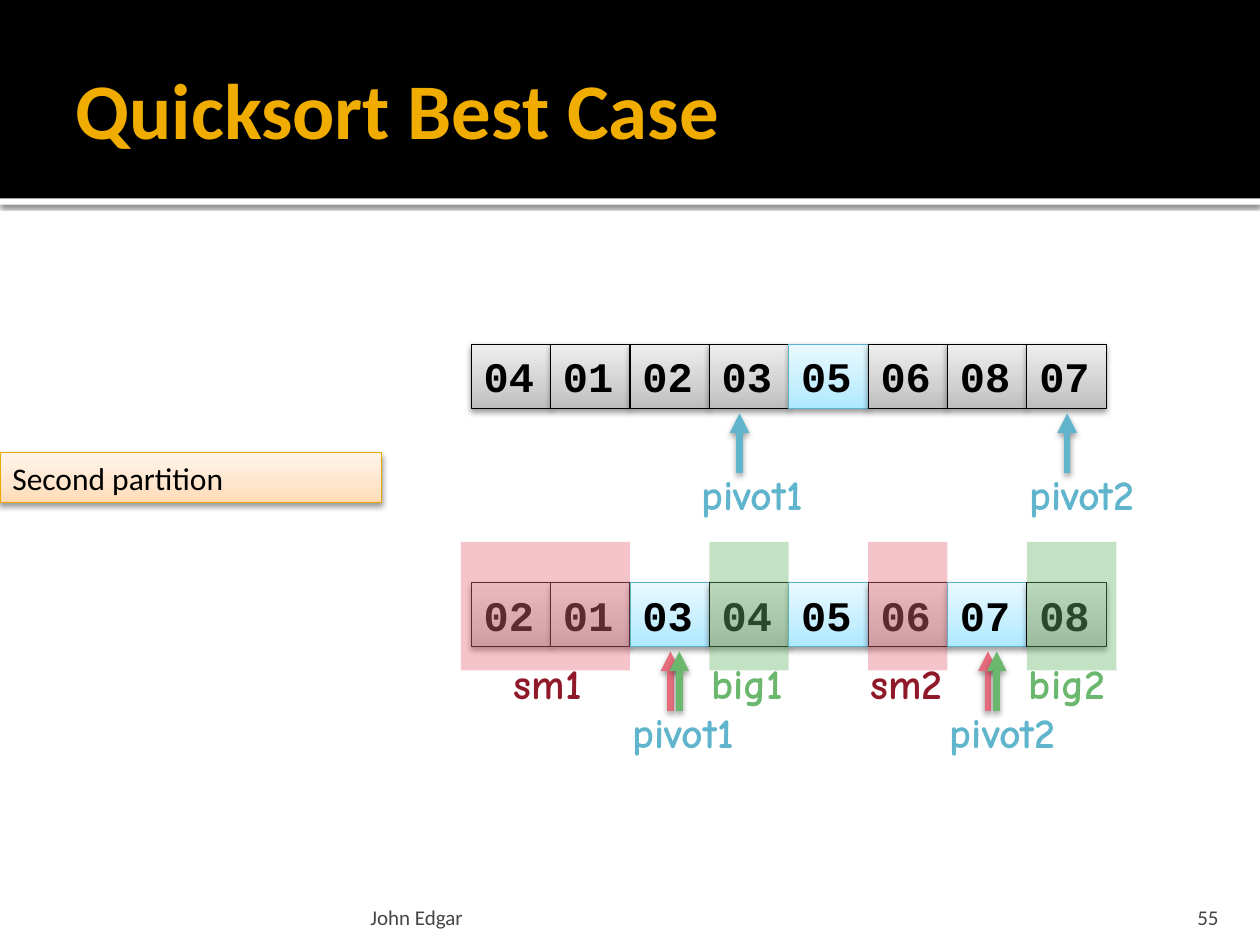
from pptx import Presentation
from pptx.dml.color import RGBColor
from pptx.enum.shapes import MSO_CONNECTOR, MSO_SHAPE
from pptx.enum.text import MSO_ANCHOR, PP_ALIGN
from pptx.oxml.ns import qn
from pptx.util import Inches, Pt
from lxml import etree

RECTANGLE, STRAIGHT = MSO_SHAPE.RECTANGLE, MSO_CONNECTOR.STRAIGHT
TOP, MIDDLE, BOTTOM = MSO_ANCHOR.TOP, MSO_ANCHOR.MIDDLE, MSO_ANCHOR.BOTTOM
LEFT, RIGHT = PP_ALIGN.LEFT, PP_ALIGN.RIGHT

BLACK = RGBColor(0, 0, 0)
WHITE = RGBColor(255, 255, 255)
GOLD = RGBColor(0xF0, 0xAD, 0x00)
DARK_GOLD = RGBColor(0xEB, 0xA9, 0x00)
GRAY = RGBColor(0x45, 0x45, 0x45)
PINK = RGBColor(0xE6, 0x6C, 0x7D)
GREEN = RGBColor(0x6B, 0xB7, 0x6D)
MAROON = RGBColor(0x90, 0x19, 0x29)
BLUE = RGBColor(0x60, 0xB5, 0xCC)
EDGE_BLUE = RGBColor(0x5B, 0xB3, 0xCA)
GRAY_SHADES = RGBColor(0xBD, 0xBD, 0xBD), RGBColor(0xD1, 0xD1, 0xD1), RGBColor(0xEE, 0xEE, 0xEE)
BLUE_SHADES = RGBColor(0xAD, 0xE9, 0xFF), RGBColor(0xC5, 0xEF, 0xFF), RGBColor(0xE9, 0xF9, 0xFF)
ORANGE_SHADES = RGBColor(0xFF, 0xDB, 0xB5), RGBColor(0xFF, 0xE5, 0xCB), RGBColor(0xFF, 0xF5, 0xEB)

TITLE_FONT = {"name": "Calibri", "size": Pt(45), "bold": True}
FOOTER_FONT = {"name": "Calibri", "size": Pt(12), "bold": False}
NOTE_FONT = {"name": "Calibri", "size": Pt(18), "bold": False}
CELL_FONT = {"name": "Courier New", "size": Pt(24), "bold": True}
LABEL_FONT = {"name": "Comic Neue", "size": Pt(24), "bold": True}

PAGE_WIDTH, PAGE_HEIGHT = 10, 7.5
ARRAY_LEFT, COLUMN, CELL_HEIGHT = 3.74, 0.63, 0.51


def to_emu(box):
    return [Inches(length) for length in box]


def column_left(column):
    return ARRAY_LEFT + column * COLUMN


def add_node(parent, tag, **values):
    return etree.SubElement(parent, qn(tag), {key: str(value) for key, value in values.items()})


def add_shadow(item, opacity=38, blur=3.5, distance=2):
    properties = item.element.spPr
    for old in properties.findall(qn("a:effectLst")):
        properties.remove(old)
    effects = add_node(properties, "a:effectLst")
    shadow = add_node(effects, "a:outerShdw", blurRad=Pt(blur), dist=Pt(distance),
                      dir=5400000, rotWithShape=0)
    color = add_node(shadow, "a:srgbClr", val=BLACK)
    add_node(color, "a:alpha", val=opacity * 1000)


def write(item, text, font, color, align=LEFT, anchor=TOP, wrap=True, insets=None):
    frame = item.text_frame
    frame.word_wrap, frame.vertical_anchor = wrap, anchor
    for side, inset in (insets or {}).items():
        setattr(frame, "margin_" + side, Inches(inset))
    para = frame.paragraphs[0]
    para.alignment = align
    span = para.add_run()
    span.text = text
    for name, value in font.items():
        setattr(span.font, name, value)
    span.font.color.rgb = color


def add_block(page, box, color, opacity=100):
    block = page.shapes.add_shape(RECTANGLE, *to_emu(box))
    block.shadow.inherit = False
    block.line.fill.background()
    block.fill.solid()
    block.fill.fore_color.rgb = color
    if opacity < 100:
        add_node(block.element.spPr.find(".//" + qn("a:srgbClr")), "a:alpha", val=opacity * 1000)
    return block


def add_shaded_box(page, box, text, font, shades, edge, anchor=MIDDLE):
    block = page.shapes.add_shape(RECTANGLE, *to_emu(box))
    block.fill.gradient()
    block.fill.gradient_angle = 90
    stops = block.element.spPr.find(".//" + qn("a:gsLst"))
    for stop in list(stops):
        stops.remove(stop)
    for percent, shade in zip((0, 35, 100), shades):
        add_node(add_node(stops, "a:gs", pos=percent * 1000), "a:srgbClr", val=shade)
    block.line.color.rgb, block.line.width = edge, Pt(0.5)
    add_shadow(block)
    write(block, text, font, BLACK, anchor=anchor)


def add_label(page, left, top, width, text, color):
    label = page.shapes.add_textbox(*to_emu((left, top, width, 0.5)))
    write(label, text, LABEL_FONT, color, wrap=False)


def add_arrow(page, left, top, color):
    arrow = page.shapes.add_connector(STRAIGHT, *to_emu((left, top + 0.47, left, top)))
    arrow.line.color.rgb, arrow.line.width = color, Pt(3.78)
    add_node(arrow.line._get_or_add_ln(), "a:tailEnd", type="triangle")
    add_shadow(arrow)


def add_header(page, box, text):
    left, top, width, height = box
    strip = add_block(page, (left, top + height, width, 0.05), WHITE)
    add_shadow(strip, opacity=60, blur=2.5, distance=0.8)
    add_block(page, box, BLACK)
    title = page.shapes.title
    title.element.getparent().append(title.element)
    title.left, title.top, title.width, title.height = to_emu(
        (left + 0.05 * width, top + 0.17, 0.9 * width, height - 0.2))
    write(title, text, TITLE_FONT, GOLD, anchor=MIDDLE,
          insets={"left": 0.1, "top": 0.05, "right": 0.05, "bottom": 0.05})


def add_footer(page, top, author, number):
    for left, width, text, align, side in ((2.89, 6.02, author, LEFT, 0.05),
                                           (8.97, 0.8, number, RIGHT, 0.1)):
        note = page.shapes.add_textbox(*to_emu((left, top, width, 0.3)))
        write(note, text, FOOTER_FONT, GRAY, align, BOTTOM,
              insets={"left": side, "top": 0.05, "right": side, "bottom": 0})


def add_array(page, top, values, pivots):
    for column, value in enumerate(values):
        shades, edge = (BLUE_SHADES, EDGE_BLUE) if value in pivots else (GRAY_SHADES, BLACK)
        box = column_left(column), top, COLUMN, CELL_HEIGHT
        add_shaded_box(page, box, value, CELL_FONT, shades, edge)


def add_pivot(page, left, top, label_top, text, colors):
    for index, color in enumerate(colors):
        add_arrow(page, left + 0.07 * index, top, color)
    add_label(page, left - 0.4, label_top, 1.04, text, BLUE)


def add_partition(page, top, start, end, label_column, text, fill, color):
    box = column_left(start), top - 0.32, (end - start) * COLUMN, 2 * CELL_HEIGHT
    add_block(page, box, fill, opacity=40)
    add_label(page, column_left(label_column), top + 0.55, 0.82, text, color)


def add_first_array(page, top):
    add_array(page, top, ("04", "01", "02", "03", "05", "06", "08", "07"), ("05",))
    for left, text in ((5.87, "pivot1"), (8.47, "pivot2")):
        add_pivot(page, left, top + 0.55, top + 0.94, text, (BLUE,))


def add_second_array(page, top):
    add_array(page, top, ("02", "01", "03", "04", "05", "06", "07", "08"), ("03", "05", "07"))
    for column, text in ((2.51, "pivot1"), (6.51, "pivot2")):
        add_pivot(page, column_left(column), top + 0.55, top + 0.94, text, (PINK, GREEN))
    for start, end, label_column, text, fill, color in (
            (-0.13, 2, 0.38, "sm1", PINK, MAROON), (3, 4, 2.87, "big1", GREEN, GREEN),
            (5, 6, 4.87, "sm2", PINK, MAROON), (7, 8.13, 6.87, "big2", GREEN, GREEN)):
        add_partition(page, top, start, end, label_column, text, fill, color)


def main():
    deck = Presentation()
    deck.slide_width, deck.slide_height = to_emu((PAGE_WIDTH, PAGE_HEIGHT))
    page = deck.slides.add_slide(deck.slide_layouts[5])
    add_header(page, (0, 0, PAGE_WIDTH, 0.21 * PAGE_HEIGHT), "Quicksort Best Case")
    add_footer(page, 7.08, "John Edgar", "55")
    add_first_array(page, 2.73)
    add_shaded_box(page, (0, 3.59, 3.03, 0.4), "Second partition", NOTE_FONT,
                   ORANGE_SHADES, DARK_GOLD)
    add_second_array(page, 4.62)
    deck.save("out.pptx")


if __name__ == "__main__":
    main()
